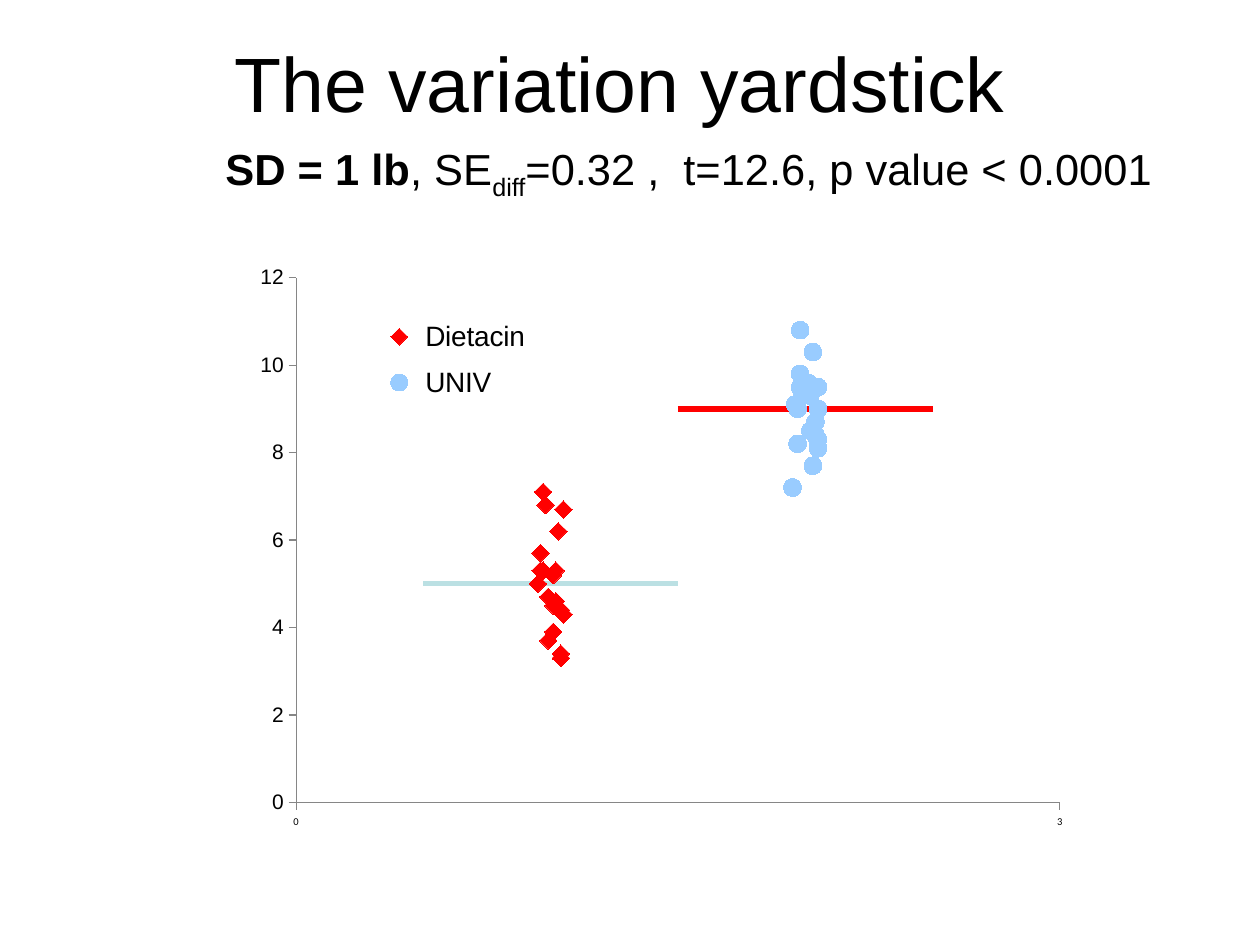
from pptx import Presentation
from pptx.chart.data import XyChartData
from pptx.dml.color import RGBColor
from pptx.enum.chart import (XL_CHART_TYPE, XL_LEGEND_POSITION, XL_MARKER_STYLE,
                             XL_TICK_MARK)
from pptx.enum.text import MSO_ANCHOR, PP_ALIGN
from pptx.oxml import parse_xml
from pptx.oxml.ns import nsdecls
from pptx.util import Inches, Pt

BLACK = RGBColor(0, 0, 0)
GRAY = RGBColor(0x86, 0x86, 0x86)
RED = RGBColor(0xFF, 0, 0)
LIGHT_BLUE = RGBColor(0x99, 0xCC, 0xFF)
PALE_TEAL = RGBColor(0xBB, 0xE0, 0xE3)
DIAMOND, CIRCLE, NO_MARKER = (XL_MARKER_STYLE.DIAMOND, XL_MARKER_STYLE.CIRCLE,
                              XL_MARKER_STYLE.NONE)
OUTSIDE, NO_TICK = XL_TICK_MARK.OUTSIDE, XL_TICK_MARK.NONE

TITLE = [("The variation yardstick", {})]
STATISTICS = [
    ("SD = 1 lb", {"bold": True}),
    (", SE", {}),
    ("diff", {"baseline": -25}),
    ("=0.32 ,  t=12.6, p value < 0.0001", {}),
]

DIETS = [
    dict(name="Dietacin", marker=DIAMOND, color=RED,
         x=[1.01, 0.96, 0.96, 0.99, 1.04, 1.02, 1.01, 0.98, 1.01, 0.95,
            1.03, 1.05, 1.04, 0.97, 1.02, 1.05, 0.99, 0.97, 1.04, 0.97],
         y=[4.5, 5.3, 5.7, 3.7, 3.3, 5.3, 3.9, 6.8, 5.2, 5,
            6.2, 6.7, 3.4, 5.3, 4.6, 4.3, 4.7, 7.1, 4.4, 5.3]),
    dict(name="UNIV", marker=CIRCLE, color=LIGHT_BLUE,
         x=[2.05, 1.97, 1.95, 2.04, 1.97, 1.99, 2.03, 2.05, 2.04, 2.05,
            2.03, 1.98, 2.02, 2.01, 2.04, 1.96, 2.05, 2.02, 1.98, 1.98],
         y=[9.5, 9, 7.2, 8.7, 8.2, 9.3, 7.7, 8.1, 9.5, 8.3,
            10.3, 10.8, 8.5, 9.6, 8.4, 9.1, 9, 9.3, 9.8, 9.5]),
]
MEANS = [
    dict(name="Series 3", color=PALE_TEAL, x=[0.5, 1.5], y=[5, 5]),
    dict(name="Series 4", color=RED, x=[1.5, 2.5], y=[9, 9]),
]


def add_text(s, box, runs, size, align, anchor, space_before=0):
    tf = s.shapes.add_textbox(*map(Inches, box)).text_frame
    tf.word_wrap = True
    tf.vertical_anchor = anchor
    p = tf.paragraphs[0]
    p.alignment = align
    p.space_before = Pt(space_before)
    for text, style in runs:
        r = p.add_run()
        r.text = text
        r.font.name, r.font.size = "Arial", Pt(size)
        r.font.bold = style.get("bold", False)
        r.font.color.rgb = BLACK
        if "baseline" in style:
            r.font._element.set("baseline", str(style["baseline"] * 1000))


def manual_layout(x, y, w, h, inner=False):
    target = '<c:layoutTarget val="inner"/>' if inner else ""
    sizes = "".join(f'<c:{tag} val="{value}"/>'
                    for tag, value in zip("xywh", (x, y, w, h)))
    return parse_xml(
        f'<c:layout {nsdecls("c")}><c:manualLayout>{target}<c:xMode val="edge"/>'
        f'<c:yMode val="edge"/>{sizes}</c:manualLayout></c:layout>')


def format_axis(axis, maximum, step, size, font):
    values = {"minimum_scale": 0, "maximum_scale": maximum, "major_unit": step,
              "has_major_gridlines": False, "has_title": False,
              "major_tick_mark": OUTSIDE, "minor_tick_mark": NO_TICK}
    for name, value in values.items():
        setattr(axis, name, value)
    labels = axis.tick_labels
    labels.number_format, labels.number_format_is_linked = "#,##0", False
    labels.font.size, labels.font.name = Pt(size), font
    labels.font.color.rgb = BLACK
    axis.format.line.color.rgb = GRAY
    axis.format.line.width = Pt(0.75)


def format_series(series, item):
    series.smooth = False
    marker = series.marker
    marker.style = item.get("marker", NO_MARKER)
    if "marker" in item:
        series.format.line.fill.background()
        marker.size = 10
        marker.format.fill.solid()
        marker.format.fill.fore_color.rgb = item["color"]
        marker.format.line.color.rgb = item["color"]
    else:
        series.format.line.color.rgb = item["color"]
        series.format.line.width = Pt(3)


def format_legend(chart):
    chart.has_legend = True
    legend = chart.legend
    legend.position = XL_LEGEND_POSITION.RIGHT
    legend.include_in_layout = False
    legend.font.size, legend.font.name = Pt(16), "Arial"
    legend.font.color.rgb = BLACK
    element = legend._element
    for old in element.findall("{*}layout"):
        element.remove(old)
    hidden = [parse_xml(f'<c:legendEntry {nsdecls("c")}><c:idx val="{i}"/>'
                        '<c:delete val="1"/></c:legendEntry>')
              for i in range(len(DIETS), len(DIETS) + len(MEANS))]
    parts = hidden + [manual_layout(0.2, 0.12, 0.17, 0.17)]
    for position, part in enumerate(parts, 1):
        element.insert(position, part)


def add_scatter(s):
    data = XyChartData()
    items = DIETS + MEANS
    for item in items:
        series = data.add_series(item["name"])
        for x, y in zip(item["x"], item["y"]):
            series.add_data_point(x, y)
    box = map(Inches, (1.5, 1.83, 7.33, 5))
    chart = s.shapes.add_chart(XL_CHART_TYPE.XY_SCATTER, *box, data).chart
    chart.has_title = False
    chart.font.name, chart.font.size = "Arial", Pt(8)
    chart.font.color.rgb = BLACK
    plot = chart.plots[0]
    plot.vary_by_categories = False
    for series, item in zip(plot.series, items):
        format_series(series, item)
    format_axis(chart.category_axis, 3, 3, 6, "Calibri")
    format_axis(chart.value_axis, 12, 2, 12, "Arial")
    format_legend(chart)
    area = chart._chartSpace.chart.plotArea
    for old in area.findall("{*}layout"):
        area.remove(old)
    area.insert(0, manual_layout(0.116, 0.075, 0.827, 0.833, inner=True))


def main():
    prs = Presentation()
    prs.slide_width, prs.slide_height = Inches(10), Inches(7.5)
    s = prs.slides.add_slide(prs.slide_layouts[6])
    add_text(s, (0.42, 0.17, 9, 0.95), TITLE, 44, PP_ALIGN.CENTER, MSO_ANCHOR.MIDDLE)
    add_text(s, (1.69, 1.08, 7.81, 0.75), STATISTICS, 24.8, PP_ALIGN.LEFT,
             MSO_ANCHOR.TOP, space_before=5)
    add_scatter(s)
    prs.save("out.pptx")


if __name__ == "__main__":
    main()
